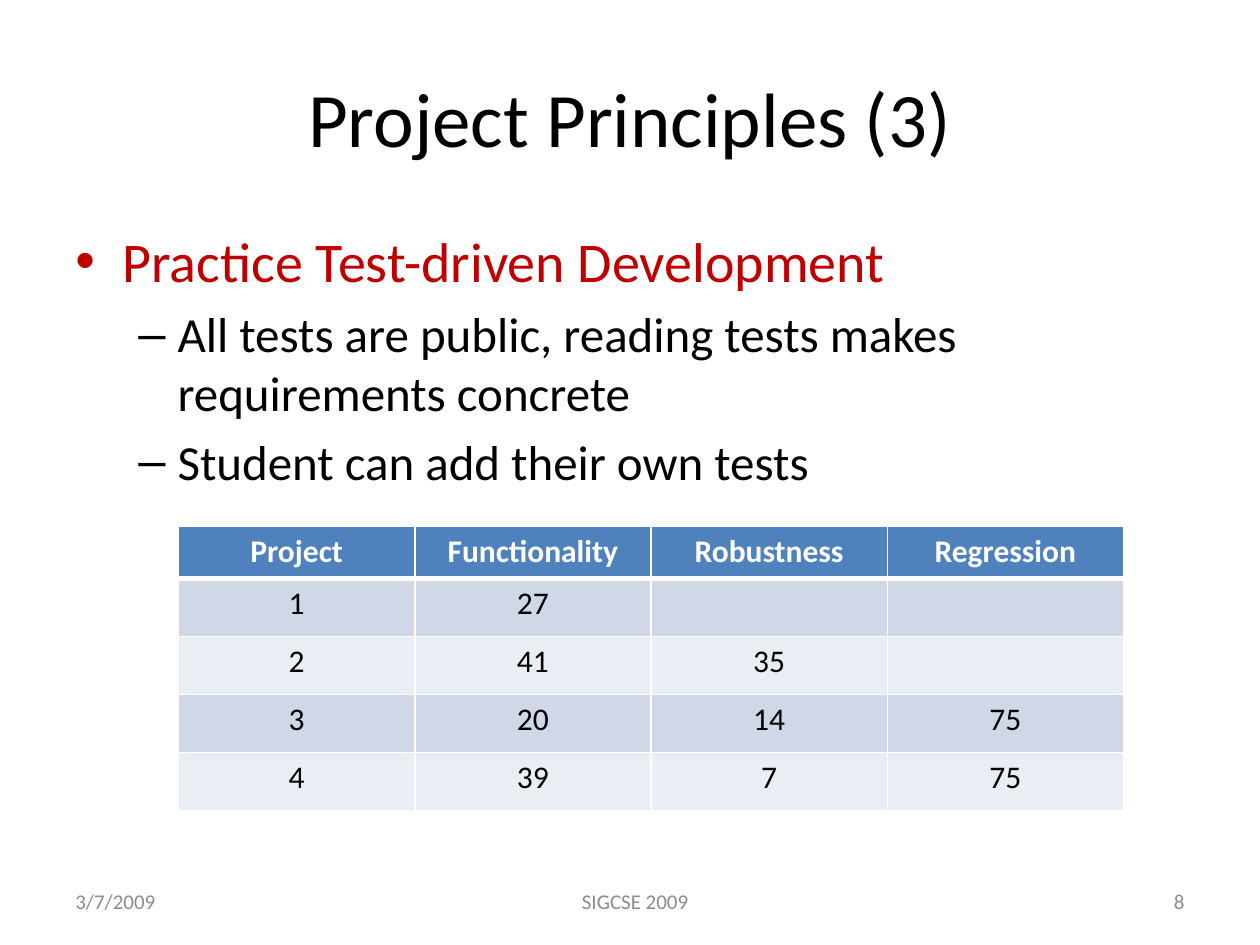
from pptx import Presentation
from pptx.dml.color import RGBColor as RGB
from pptx.enum.text import MSO_ANCHOR as Anchor, PP_ALIGN as Align
from pptx.oxml.ns import qn
from pptx.util import Cm, Pt
from lxml.etree import SubElement as Sub

FONT = "Calibri"
INK = {"black": "000000", "red": "C00000", "gray": "8C8C8C", "white": "FFFFFF",
       "head": "4F81BD", "dark": "D0D8E8", "light": "E9EDF4"}


def write(par, text, size=18, color="black", bold=False, align=Align.LEFT,
          bullet=None, left=0, hang=0, before=0):
    """Fill one paragraph with formatted text."""
    run = par.add_run()
    run.text = text
    run.font.name, run.font.size, run.font.bold = FONT, Pt(size), bold
    run.font.color.rgb = RGB.from_string(INK[color])
    par.alignment = align
    par.space_before = Pt(before)
    if bullet:
        props = par._p.get_or_add_pPr()
        props.set("marL", str(Cm(left)))
        props.set("indent", str(-Cm(hang)))
        Sub(props, qn("a:buFont"), typeface="Arial")
        Sub(props, qn("a:buChar"), char=bullet)


def add_box(x, y, w, h, anchor=Anchor.MIDDLE):
    frame = slide.shapes.add_textbox(Cm(x), Cm(y), Cm(w), Cm(h)).text_frame
    frame.word_wrap = True
    frame.vertical_anchor = anchor
    return frame


deck = Presentation()
deck.slide_width, deck.slide_height = Cm(25.4), Cm(19.05)
slide = deck.slides.add_slide(deck.slide_layouts[6])

# Title
title = add_box(1.27, 0.76, 22.86, 3.18)
write(title.paragraphs[0], "Project Principles (3)", size=44, align=Align.CENTER)

# Bullets
body = add_box(1.27, 4.45, 22.86, 12.57, Anchor.TOP)
write(body.paragraphs[0], "Practice Test-driven Development", size=32,
      color="red", bullet="•", left=0.95, hang=0.95, before=6.4)
for text in ("All tests are public, reading tests makes requirements concrete",
             "Student can add their own tests"):
    write(body.add_paragraph(), text, size=28, bullet="–",
          left=2.06, hang=0.79, before=5.6)

# Footer
for text, x, w, align in (("3/7/2009", 1.27, 5.93, Align.LEFT),
                          ("SIGCSE 2009", 7.83, 9.95, Align.CENTER),
                          ("8", 18.2, 5.93, Align.RIGHT)):
    foot = add_box(x, 17.66, w, 1.01)
    write(foot.paragraphs[0], text, size=12, color="gray", align=align)

# Table of test counts
rows = (("Project", "Functionality", "Robustness", "Regression"),
        ("1", "27", "", ""),
        ("2", "41", "35", ""),
        ("3", "20", "14", "75"),
        ("4", "39", "7", "75"))
table = slide.shapes.add_table(len(rows), len(rows[0]), Cm(3.6), Cm(10.6),
                               Cm(19.05), Cm(5.74)).table
for col in table.columns:
    col.width = Cm(19.05 / len(rows[0]))
for r, row in enumerate(rows):
    head = r == 0
    table.rows[r].height = Cm(1.06 if head else 1.17)
    fill = "head" if head else ("light", "dark")[r % 2]
    for c, text in enumerate(row):
        cell = table.cell(r, c)
        # White borders, thick between header and body
        props = cell._tc.get_or_add_tcPr()
        for side in "LRTB":
            thick = (head and side == "B") or (r == 1 and side == "T")
            line = Sub(props, qn("a:ln" + side), w=str(Pt(3 if thick else 1)))
            Sub(Sub(line, qn("a:solidFill")), qn("a:srgbClr"), val=INK["white"])
        cell.fill.solid()
        cell.fill.fore_color.rgb = RGB.from_string(INK[fill])
        if text:
            write(cell.text_frame.paragraphs[0], text, bold=head,
                  color="white" if head else "black", align=Align.CENTER)

deck.save("out.pptx")
